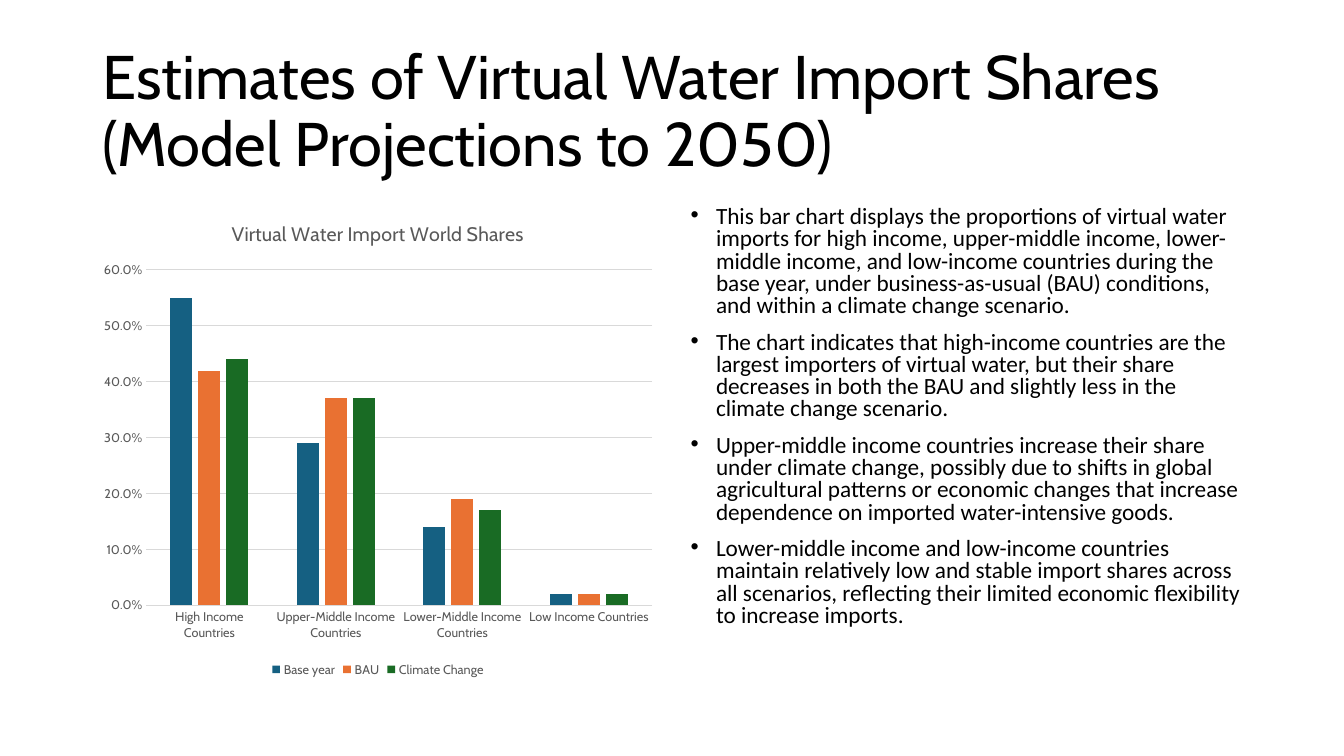
from pptx import Presentation
from pptx.chart.data import CategoryChartData
from pptx.dml.color import RGBColor
from pptx.enum.chart import XL_CHART_TYPE, XL_LEGEND_POSITION, XL_TICK_MARK
from pptx.enum.text import MSO_ANCHOR, MSO_AUTO_SIZE, PP_ALIGN
from pptx.oxml.ns import qn
from pptx.util import Cm, Pt
from lxml import etree

COLUMNS = XL_CHART_TYPE.COLUMN_CLUSTERED
BOTTOM = XL_LEGEND_POSITION.BOTTOM
NO_TICK = XL_TICK_MARK.NONE
TOP, MIDDLE = MSO_ANCHOR.TOP, MSO_ANCHOR.MIDDLE
NO_FIT = MSO_AUTO_SIZE.NONE
LEFT = PP_ALIGN.LEFT

COLORS = {
    "text": "000000", "label": "595959", "grid": "D9D9D9",
    "base": "156082", "bau": "E97132", "climate": "196B24",
}
EDGE, HALF, ROW, DEPTH = 2.33, 14.39, 5.08, 12.09

TITLE = "Estimates of Virtual Water Import Shares (Model Projections to 2050)"
POINTS = [
    "This bar chart displays the proportions of virtual water imports for high income, "
    "upper-middle income, lower-middle income, and low-income countries during the base "
    "year, under business-as-usual (BAU) conditions, and within a climate change scenario.",
    "The chart indicates that high-income countries are the largest importers of virtual "
    "water, but their share decreases in both the BAU and slightly less in the climate "
    "change scenario.",
    "Upper-middle income countries increase their share under climate change, possibly due "
    "to shifts in global agricultural patterns or economic changes that increase dependence "
    "on imported water-intensive goods.",
    "Lower-middle income and low-income countries maintain relatively low and stable import "
    "shares across all scenarios, reflecting their limited economic flexibility to increase "
    "imports.",
]
GROUPS = [f"{level} Income Countries"
          for level in ("High", "Upper-Middle", "Lower-Middle", "Low")]
SHARES = [
    ("Base year", "base", (0.55, 0.29, 0.14, 0.02)),
    ("BAU", "bau", (0.42, 0.37, 0.19, 0.02)),
    ("Climate Change", "climate", (0.44, 0.37, 0.17, 0.02)),
]


class Deck:
    head, body = "Cabin", "Calibri"

    def __init__(self):
        self.file = Presentation()
        self.file.slide_width, self.file.slide_height = Cm(33.87), Cm(19.05)
        self.slide = self.file.slides.add_slide(self.file.slide_layouts[1])

    def color(self, name):
        return RGBColor.from_string(COLORS[name])

    def style(self, font, size, color="label", face=head):
        font.size, font.name, font.bold = Pt(size), face, False
        font.color.rgb = self.color(color)

    def rule(self, line):
        line.color.rgb = self.color("grid")
        line.width = Pt(0.75)

    def place(self, shape, box, anchor):
        """Move a placeholder and fix how its text sits; return its text frame."""
        shape.left, shape.top, shape.width, shape.height = map(Cm, box)
        frame = shape.text_frame
        frame.word_wrap, frame.auto_size = True, NO_FIT
        frame.vertical_anchor = anchor
        return frame

    def title(self, text, box):
        frame = self.place(self.slide.shapes.title, box, MIDDLE)
        frame.text = text
        para = frame.paragraphs[0]
        para.alignment, para.line_spacing = LEFT, 0.9
        self.style(para.runs[0].font, 44, "text")

    def bullets(self, points, box):
        frame = self.place(self.slide.placeholders[1], box, TOP)
        frame.text = "\n".join(points)
        for para in frame.paragraphs:
            para.alignment, para.line_spacing = LEFT, 0.8
            para.space_before = Pt(10)
            self.style(para.runs[0].font, 16.6, "text", self.body)
            props = para._p.get_or_add_pPr()
            props.set("marL", str(Cm(0.64)))
            props.set("indent", str(-Cm(0.64)))
            etree.SubElement(props, qn("a:buFont"), typeface="Arial")
            etree.SubElement(props, qn("a:buChar"), char="•")

    def chart(self, name, groups, shares, box):
        data = CategoryChartData(number_format="0.0%")
        data.categories = groups
        for label, _, values in shares:
            data.add_series(label, values)
        chart = self.slide.shapes.add_chart(COLUMNS, *map(Cm, box), data).chart
        self.style(chart.font, 10, "text")

        frame = chart.chart_title.text_frame
        frame.text = name
        self.style(frame.paragraphs[0].runs[0].font, 14)
        chart.chart_title.include_in_layout = False

        plot = chart.plots[0]
        plot.gap_width, plot.overlap = 219, -27
        plot.vary_by_categories = False
        for series, (_, color, _) in zip(plot.series, shares):
            series.format.fill.solid()
            series.format.fill.fore_color.rgb = self.color(color)
            series.invert_if_negative = False

        for axis in (chart.category_axis, chart.value_axis):
            axis.major_tick_mark = axis.minor_tick_mark = NO_TICK
            self.style(axis.tick_labels.font, 9)
        self.rule(chart.category_axis.format.line)
        scale = chart.value_axis
        scale.minimum_scale, scale.maximum_scale, scale.major_unit = 0, 0.6, 0.1
        scale.tick_labels.number_format = "0.0%"
        scale.tick_labels.number_format_is_linked = False
        scale.format.line.fill.background()
        self.rule(scale.major_gridlines.format.line)

        chart.has_legend = True
        chart.legend.position = BOTTOM
        chart.legend.include_in_layout = False
        self.style(chart.legend.font, 9)


def main():
    deck = Deck()
    deck.title(TITLE, (EDGE, 1.01, 29.21, 3.68))
    deck.bullets(POINTS, (17.15, ROW, HALF, DEPTH))
    deck.chart("Virtual Water Import World Shares", GROUPS, SHARES,
               (EDGE, ROW, HALF, DEPTH))
    deck.file.save("out.pptx")


if __name__ == "__main__":
    main()
